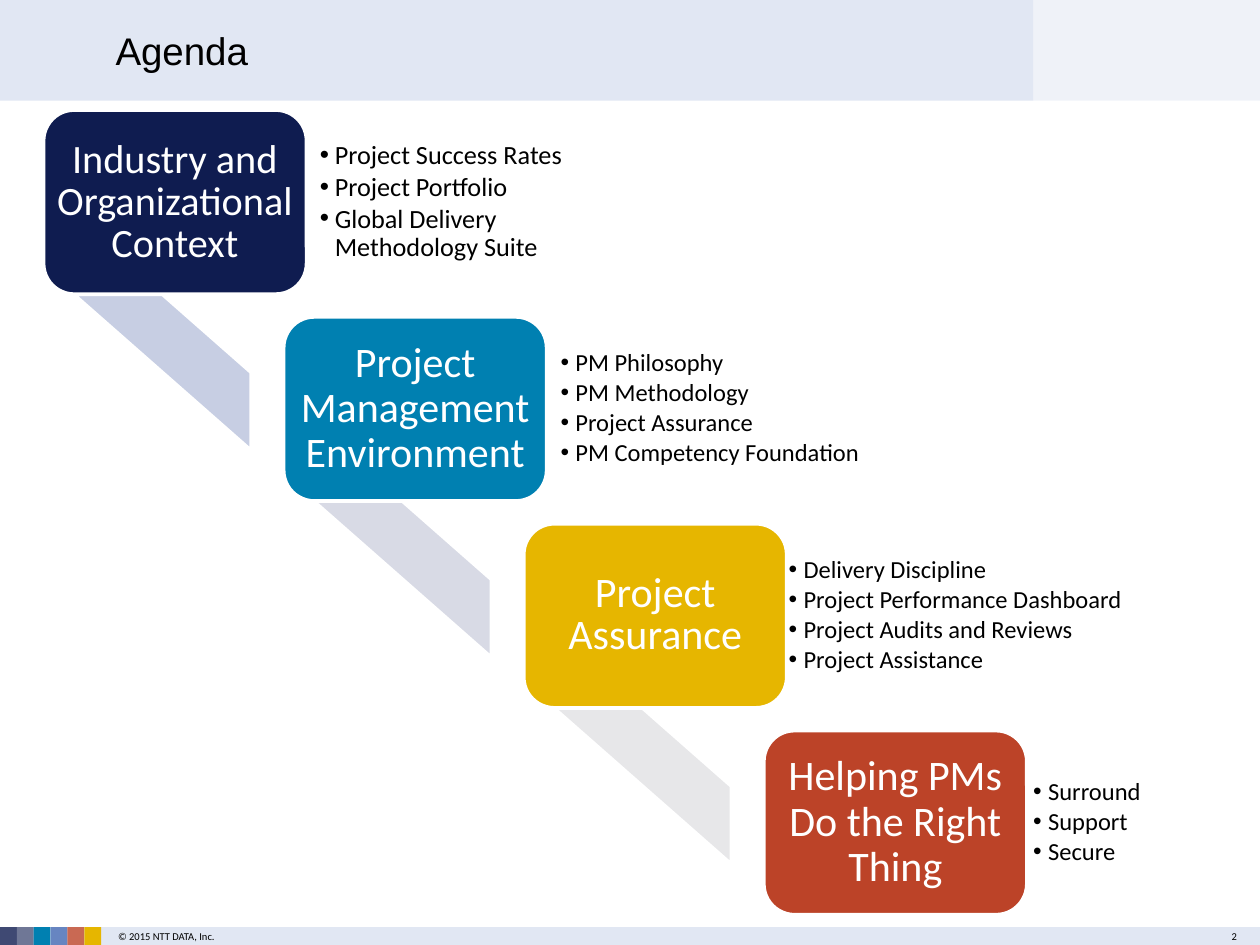
from lxml import etree
from pptx import Presentation, util as u
from pptx.dml.color import RGBColor
from pptx.enum import shapes, text
from pptx.oxml.ns import qn

TITLE = "Agenda"
COPYRIGHT = "© 2015 NTT DATA, Inc."
PAGE = "2"

# Lengths are centimetres; "list" is the left and width of the bullet list.
STEPS = [
    dict(name="Industry and Organizational Context", size=23, leading=u.Pt(24),
         fill="0F1C50", stripe="C7CEE3", list=(6.3, 5.72), list_size=15,
         items=["Project Success Rates", "Project Portfolio",
                "Global Delivery Methodology Suite"]),
    dict(name="Project Management Environment", size=24, leading=0.9,
         fill="0080B1", stripe="D8DAE5", list=(11.15, 6.55), list_size=14,
         items=["PM Philosophy", "PM Methodology", "Project Assurance",
                "PM Competency Foundation"]),
    dict(name="Project Assurance", size=24, leading=u.Pt(24),
         fill="E6B600", stripe="E7E7E9", list=(15.75, 7.16), list_size=14,
         items=["Delivery Discipline", "Project Performance Dashboard",
                "Project Audits and Reviews", "Project Assistance"]),
    dict(name="Helping PMs Do the Right Thing", size=24, leading=0.9,
         fill="BC4328", stripe=None, list=(20.68, 3.86), list_size=14,
         items=["Surround", "Support", "Secure"]),
]

THEME = dict(
    band="E1E7F3", ink="000000", paper="FFFFFF",
    swatches=["3F4973", "6F7796", "0080B1", "6785C1", "C96953", "E6B600"],
    title_font="Arial", font="Calibri", title_size=22, small=6, outline=2,
)

WIDTH, HEIGHT = 25.4, 19.05
BAND_H, BAND_W = 2.03, 20.83
FOOT_Y, FOOT_H, SWATCH_W = 18.69, 0.36, 0.34
BOX_X, BOX_Y, BOX_W, BOX_H = 0.88, 2.22, 5.3, 3.71
STEP_X, STEP_Y = 4.84, 4.17
STRIPE_DX, STRIPE_DY, STRIPE_W, STRIPE_H = 0.82, 3.5, 3.15, 3.58
LIST_DY, LIST_H, LIST_INSET, INDENT = 0.35, 3, 0.15, 0.3

prs = Presentation()
prs.slide_width, prs.slide_height = u.Cm(WIDTH), u.Cm(HEIGHT)
s = prs.slides.add_slide(prs.slide_layouts[6])


def add_shape(kind, x, y, w, h, fill, line=None, alpha=None):
    sp = s.shapes.add_shape(kind, u.Cm(x), u.Cm(y), u.Cm(w), u.Cm(h))
    sp.shadow.inherit = False
    sp.fill.solid()
    sp.fill.fore_color.rgb = RGBColor.from_string(fill)
    if alpha:
        color = sp.fill._xPr.find(".//" + qn("a:srgbClr"))
        etree.SubElement(color, qn("a:alpha"), val=str(alpha * 1000))
    if line:
        sp.line.color.rgb = RGBColor.from_string(line)
        sp.line.width = u.Pt(THEME["outline"])
    else:
        sp.line.fill.background()
    return sp


def add_box(x, y, w, h):
    return s.shapes.add_textbox(u.Cm(x), u.Cm(y), u.Cm(w), u.Cm(h))


def add_bullet(p):
    pPr = p._p.get_or_add_pPr()
    pPr.set("marL", str(u.Cm(INDENT)))
    pPr.set("indent", str(-u.Cm(INDENT)))
    etree.SubElement(pPr, qn("a:buFont"), typeface="Arial")
    etree.SubElement(pPr, qn("a:buChar"), char="•")


def write(sp, lines, size, font=THEME["font"], color=THEME["ink"], inset=(0.25, 0),
          anchor=text.MSO_ANCHOR.MIDDLE, align=text.PP_ALIGN.LEFT,
          leading=None, after=None, bullets=False):
    """Fill a shape with one paragraph per line; inset is (sides, top and bottom)."""
    tf = sp.text_frame
    tf.word_wrap = True
    tf.vertical_anchor = anchor
    tf.margin_left = tf.margin_right = u.Cm(inset[0])
    tf.margin_top = tf.margin_bottom = u.Cm(inset[1])
    for i, line in enumerate(lines):
        p = tf.paragraphs[0] if i == 0 else tf.add_paragraph()
        p.alignment = align
        if leading:
            p.line_spacing = leading
        if after:
            p.space_after = u.Pt(after)
        if bullets:
            p.level = 1
            add_bullet(p)
        r = p.add_run()
        r.text = line
        r.font.size, r.font.name = u.Pt(size), font
        r.font.color.rgb = RGBColor.from_string(color)


RECT = shapes.MSO_SHAPE.RECTANGLE
add_shape(RECT, 0, 0, BAND_W, BAND_H, THEME["band"])
add_shape(RECT, BAND_W, 0, WIDTH - BAND_W, BAND_H, THEME["band"], alpha=50)
add_shape(RECT, 0, FOOT_Y, WIDTH, FOOT_H, THEME["band"])
for i, swatch in enumerate(THEME["swatches"]):
    add_shape(RECT, i * SWATCH_W, FOOT_Y, SWATCH_W, FOOT_H, swatch)

write(add_box(2.08, 0, 22.86, 2.01), [TITLE], THEME["title_size"],
      font=THEME["title_font"])
for label, x, w in [(COPYRIGHT, 2.13, 6.55), (PAGE, 24.58, 0.82)]:
    write(add_box(x, 18.75, w, 0.25), [label], THEME["small"],
          anchor=text.MSO_ANCHOR.TOP)

for i, step in enumerate(STEPS):
    x, y = BOX_X + i * STEP_X, BOX_Y + i * STEP_Y
    if step["stripe"]:
        stripe = add_shape(shapes.MSO_SHAPE.DIAGONAL_STRIPE, x + STRIPE_DX, y + STRIPE_DY,
                           STRIPE_W, STRIPE_H, step["stripe"], line=THEME["paper"])
        stripe.rotation = 90
    box = add_shape(shapes.MSO_SHAPE.ROUNDED_RECTANGLE, x, y, BOX_W, BOX_H,
                    step["fill"], line=THEME["paper"])
    write(box, [step["name"]], step["size"], color=THEME["paper"], inset=(0, 0),
          align=text.PP_ALIGN.CENTER, leading=step["leading"])
    left, width = step["list"]
    write(add_box(left, y + LIST_DY, width, LIST_H), step["items"], step["list_size"],
          inset=(LIST_INSET, LIST_INSET), leading=0.9, after=2, bullets=True)

prs.save("out.pptx")
